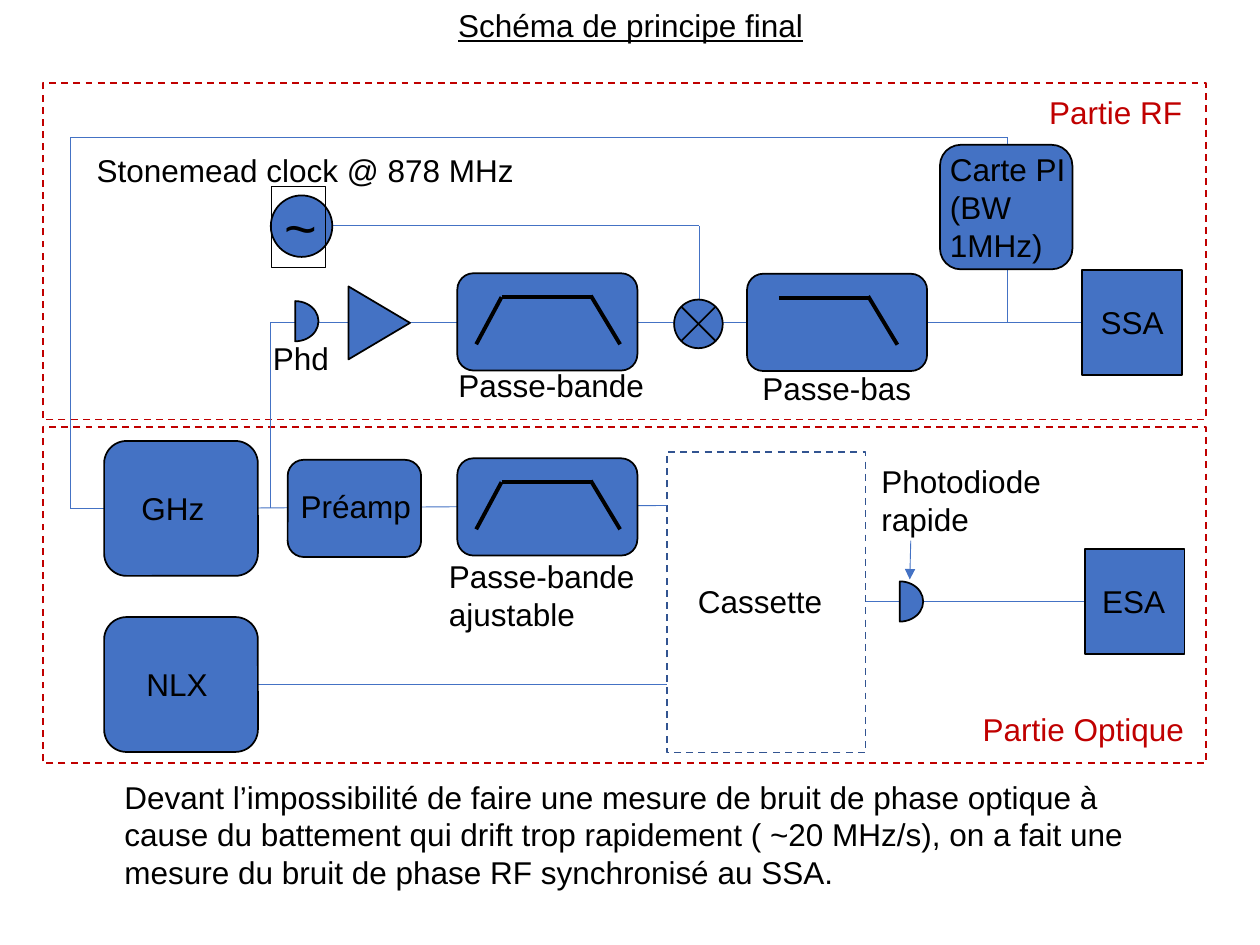
from lxml.etree import SubElement
from pptx import Presentation
from pptx.dml.color import RGBColor
from pptx.enum.dml import MSO_LINE
from pptx.enum.shapes import MSO_CONNECTOR, MSO_SHAPE as Shape
from pptx.enum.text import PP_ALIGN
from pptx.oxml.ns import qn
from pptx.util import Cm, Pt

BLUE = RGBColor(0x44, 0x72, 0xC4)
NAVY = RGBColor(0x32, 0x54, 0x91)
RED = RGBColor(0xC0, 0x00, 0x00)
BLACK = RGBColor(0x00, 0x00, 0x00)

FRAMES = [
    (0.87, 1.68, 23.44, 6.78, RED),
    (0.87, 8.61, 23.44, 6.78, RED),
    (13.44, 9.12, 4.01, 6.05, NAVY),
]
WIRES = [
    (5.46, 6.5, 13.69, 6.5),
    (13.82, 6.5, 22.07, 6.5),
    (5.46, 10.24, 5.46, 6.5),
    (5.18, 10.24, 13.44, 10.19),
    (5.21, 13.79, 13.44, 13.79),
    (17.45, 12.13, 21.87, 12.13),
    (5.84, 4.55, 14.1, 4.55),
    (14.1, 6.5, 14.1, 4.55),
    (20.3, 6.5, 20.3, 2.77),
    (1.42, 2.77, 20.3, 2.77),
    (1.42, 10.24, 1.42, 2.77),
    (2.1, 10.24, 1.42, 10.24),
]
BLOCKS = [
    (Shape.ROUNDED_RECTANGLE, 18.95, 2.92, 2.67, 2.51),
    (Shape.ROUNDED_RECTANGLE, 2.1, 8.89, 3.1, 2.72),
    (Shape.ROUNDED_RECTANGLE, 2.1, 12.44, 3.1, 2.72),
    (Shape.ROUNDED_RECTANGLE, 5.8, 9.27, 2.69, 1.96),
    (Shape.RECTANGLE, 21.82, 5.45, 2.01, 2.11),
    (Shape.RECTANGLE, 21.87, 11.07, 2.01, 2.11),
    (Shape.OVAL, 5.46, 3.94, 1.24, 1.24),
    (Shape.FLOWCHART_SUMMING_JUNCTION, 13.59, 6.04, 0.98, 0.98),
]
LABELS = [
    ("Stonemead clock @ 878 MHz", 1.7, 2.92, 9.4, 1.02, BLACK),
    ("Carte PI (BW 1MHz)", 18.9, 2.9, 3, 2.57, BLACK),
    ("SSA", 21.94, 5.99, 1.8, 1.02, BLACK),
    ("ESA", 21.97, 11.61, 1.8, 1.02, BLACK),
    ("Phd", 5.25, 6.71, 1.8, 1.02, BLACK),
    ("Passe-bande", 8.99, 7.25, 4.45, 1.02, BLACK),
    ("Passe-bas", 15.12, 7.32, 3.51, 1.02, BLACK),
    ("GHz", 2.6, 9.73, 2.08, 1.02, BLACK),
    ("NLX", 2.7, 13.28, 1.91, 1.02, BLACK),
    ("Préamp", 5.81, 9.69, 2.79, 1.02, BLACK),
    ("Passe-bande ajustable", 8.8, 11.1, 4.45, 1.8, BLACK),
    ("Cassette", 13.82, 11.61, 3.25, 1.02, BLACK),
    ("Photodiode rapide", 17.52, 9.19, 4, 1.8, BLACK),
    ("Partie RF", 20.9, 1.75, 3.4, 1.02, RED),
    ("Partie Optique", 19.56, 14.18, 4.7, 1.02, RED),
    ("Devant l’impossibilité de faire une mesure de bruit de phase optique à "
     "cause du battement qui drift trop rapidement ( ~20 MHz/s), on a fait une "
     "mesure du bruit de phase RF synchronisé au SSA.",
     2.26, 15.55, 21.23, 2.57, BLACK),
]


def add_block(s, kind, x, y, w, h):
    """Add a blue block with a black outline."""
    sp = s.shapes.add_shape(kind, Cm(x), Cm(y), Cm(w), Cm(h))
    sp.shadow.inherit = False
    sp.fill.solid()
    sp.fill.fore_color.rgb = BLUE
    sp.line.color.rgb = BLACK
    sp.line.width = Pt(1)
    return sp


def add_frame(s, x, y, w, h, color):
    """Add an empty dashed rectangle."""
    sp = add_block(s, Shape.RECTANGLE, x, y, w, h)
    sp.fill.background()
    sp.line.color.rgb = color
    sp.line.dash_style = MSO_LINE.DASH


def add_line(s, x1, y1, x2, y2, color=BLUE, width=0.5, arrow=False):
    """Add a straight line, with an arrowhead at its end if asked."""
    cx = s.shapes.add_connector(MSO_CONNECTOR.STRAIGHT, Cm(x1), Cm(y1), Cm(x2), Cm(y2))
    cx.line.color.rgb = color
    cx.line.width = Pt(width)
    if arrow:
        SubElement(cx.line._get_or_add_ln(), qn("a:tailEnd"), type="triangle")
    SubElement(cx._element.spPr, qn("a:effectLst"))


def add_text(s, text, x, y, w, h, color=BLACK, size=18):
    """Add a wrapped text box of one run."""
    sp = s.shapes.add_textbox(Cm(x), Cm(y), Cm(w), Cm(h))
    tf = sp.text_frame
    tf.word_wrap = True
    r = tf.paragraphs[0].add_run()
    r.text = text
    r.font.name = "Arial"
    r.font.size = Pt(size)
    r.font.color.rgb = color
    return sp


def add_title(s, text):
    """Add the centred, underlined title."""
    p = add_text(s, text, 5.69, 0, 14.05, 1.02).text_frame.paragraphs[0]
    p.alignment = PP_ALIGN.CENTER
    p.runs[0].font.underline = True


def add_filter(s, x, y, low_pass=False):
    """Add a filter block with its response curve."""
    add_block(s, Shape.ROUNDED_RECTANGLE, x, y, 3.63, 1.96)
    left = x - 0.25 if low_pass else x
    strokes = [(0.89, 0.48, 2.72, 0.48), (2.69, 0.45, 3.28, 1.43)]
    if not low_pass:
        strokes.append((0.89, 0.48, 0.38, 1.43))
    for x1, y1, x2, y2 in strokes:
        add_line(s, left + x1, y + y1, left + x2, y + y2, BLACK, 2.25)


def add_photodiode(s, x, y):
    """Add a half disc facing right."""
    sp = add_block(s, Shape.PIE, x, y, 0.94, 0.81)
    sp.adjustments[0] = 54
    sp.adjustments[1] = 162
    sp.rotation = 180


def add_oscillator_sign(s):
    """Add the outlined wave sign of the clock."""
    sp = add_text(s, "~", 5.48, 3.76, 1.09, 1.63, size=32)
    sp.line.color.rgb = BLACK
    sp.line.width = Pt(0.75)


def main():
    """Build the slide and save it."""
    prs = Presentation()
    prs.slide_width, prs.slide_height = Cm(25.4), Cm(19.05)
    s = prs.slides.add_slide(prs.slide_layouts[6])
    add_title(s, "Schéma de principe final")
    for frame in FRAMES:
        add_frame(s, *frame)
    for wire in WIRES:
        add_line(s, *wire)
    add_line(s, 18.36, 10.9, 18.34, 11.68, arrow=True)
    for block in BLOCKS:
        add_block(s, *block)
    add_block(s, Shape.ISOSCELES_TRIANGLE, 6.91, 5.89, 1.47, 1.24).rotation = 90
    add_filter(s, 9.22, 5.51)
    add_filter(s, 9.22, 9.24)
    add_filter(s, 15.06, 5.52, low_pass=True)
    add_photodiode(s, 5.48, 6.07)
    add_photodiode(s, 17.67, 11.72)
    add_oscillator_sign(s)
    for label in LABELS:
        add_text(s, *label)
    prs.save("out.pptx")


if __name__ == "__main__":
    main()
